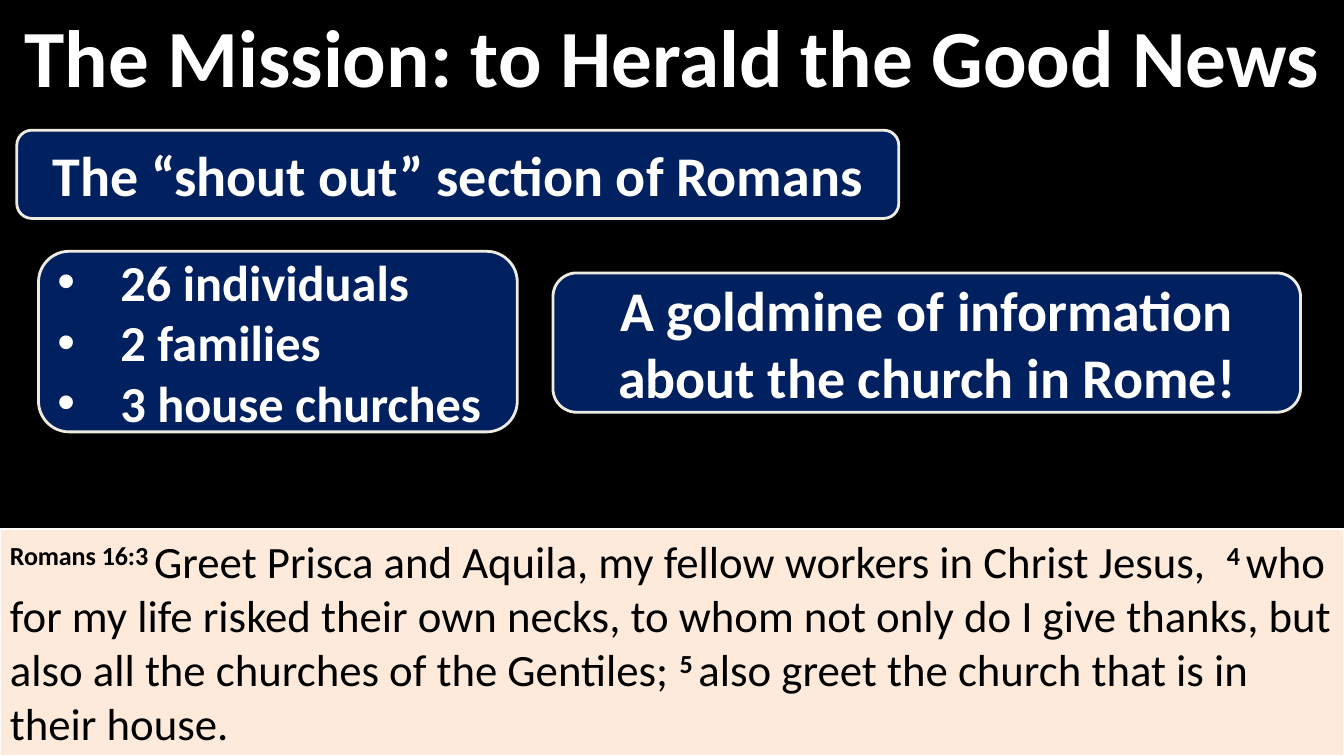
from lxml.etree import SubElement
from pptx import Presentation
from pptx.dml.color import RGBColor
from pptx.enum.shapes import MSO_SHAPE
from pptx.enum.text import MSO_ANCHOR, PP_ALIGN
from pptx.oxml.ns import qn
from pptx.util import Pt

WIDTH, HEIGHT = 960, 540
BLACK, WHITE, NAVY, CREAM, PEACH = "000000", "FFFFFF", "002060", "EEECE1", "FDEADA"


def color(hex_code):
    return RGBColor.from_string(hex_code)


def add_run(paragraph, text, size, ink, bold=True, raised=False):
    run = paragraph.add_run()
    run.text = text
    run.font.name = "Calibri"
    run.font.size = Pt(size)
    run.font.bold = bold
    run.font.color.rgb = color(ink)
    if raised:
        run.font._element.set("baseline", "30000")


def add_bullet(paragraph, indent):
    properties = paragraph._p.get_or_add_pPr()
    properties.set("marL", str(Pt(indent)))
    properties.set("indent", str(-Pt(indent)))
    SubElement(properties, qn("a:buFont"), typeface="Arial")
    SubElement(properties, qn("a:buChar"), char="•")


def add_panel(slide, preset, box, fill, outline, outline_width, anchor):
    panel = slide.shapes.add_shape(preset, *map(Pt, box))
    panel.shadow.inherit = False
    panel.fill.solid()
    panel.fill.fore_color.rgb = color(fill)
    panel.line.color.rgb = color(outline)
    panel.line.width = Pt(outline_width)
    panel.text_frame.word_wrap = True
    panel.text_frame.vertical_anchor = anchor
    return panel


def add_callout(slide, box, lines, size, bulleted=False):
    callout = add_panel(slide, MSO_SHAPE.ROUNDED_RECTANGULAR_CALLOUT, box,
                        NAVY, CREAM, 2, MSO_ANCHOR.MIDDLE)
    # Tuck the pointer into the bottom edge
    for index, value in enumerate((-0.22, 0.5, 0.17)):
        callout.adjustments[index] = value
    frame = callout.text_frame
    for index, line in enumerate(lines):
        paragraph = frame.add_paragraph() if index else frame.paragraphs[0]
        paragraph.alignment = PP_ALIGN.LEFT if bulleted else PP_ALIGN.CENTER
        if bulleted:
            add_bullet(paragraph, 45)
        add_run(paragraph, line, size, WHITE)


def add_title(slide, text):
    title = slide.shapes.add_textbox(0, 0, Pt(WIDTH), Pt(78))
    frame = title.text_frame
    frame.word_wrap = True
    frame.vertical_anchor = MSO_ANCHOR.MIDDLE
    frame.paragraphs[0].alignment = PP_ALIGN.CENTER
    add_run(frame.paragraphs[0], text, 58, WHITE)


def add_scripture(slide, verses):
    top = 378
    scripture = add_panel(slide, MSO_SHAPE.RECTANGLE, (0, top, WIDTH, HEIGHT - top),
                          PEACH, WHITE, 1.5, MSO_ANCHOR.TOP)
    paragraph = scripture.text_frame.paragraphs[0]
    paragraph.alignment = PP_ALIGN.LEFT
    for number, verse in verses:
        add_run(paragraph, number, 32, BLACK, raised=True)
        add_run(paragraph, verse, 32, BLACK, bold=False)


def main():
    deck = Presentation()
    deck.slide_width, deck.slide_height = Pt(WIDTH), Pt(HEIGHT)
    slide = deck.slides.add_slide(deck.slide_layouts[6])
    slide.background.fill.solid()
    slide.background.fill.fore_color.rgb = color(BLACK)

    # Heading and Bible passage
    add_title(slide, "The Mission: to Herald the Good News")
    add_scripture(slide, [
        ("Romans 16:3 ", "Greet Prisca and Aquila, my fellow workers in Christ Jesus,  "),
        ("4 ", "who for my life risked their own necks, to whom not only do I give "
               "thanks, but also all the churches of the Gentiles; "),
        ("5 ", "also greet the church that is in their house."),
    ])

    # Remarks on the passage
    add_callout(slide, (12, 93, 630, 63), ["The “shout out” section of Romans"], 40)
    add_callout(slide, (27.5, 179.5, 342, 129),
                ["26 individuals", "2 families", "3 house churches"], 36, bulleted=True)
    add_callout(slide, (395, 195, 534, 99.5),
                ["A goldmine of information about the church in Rome!"], 40)

    deck.save("out.pptx")


if __name__ == "__main__":
    main()
